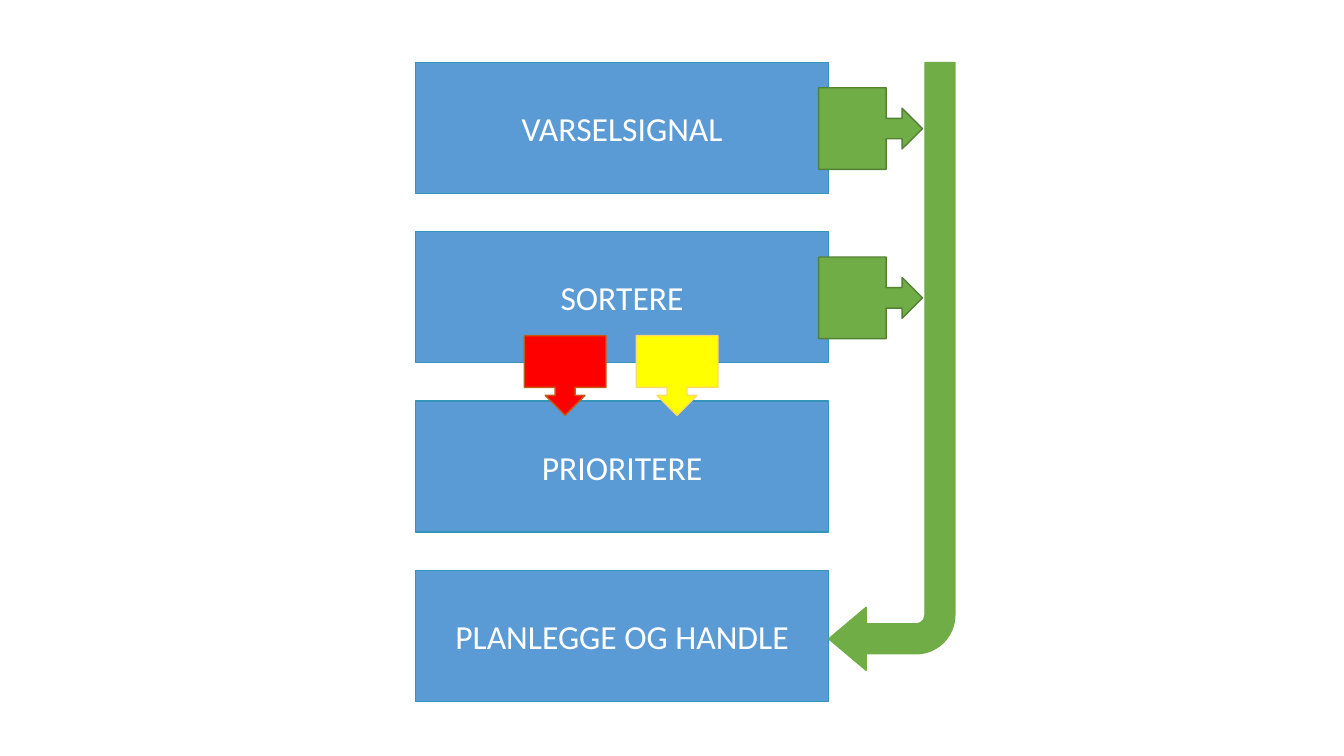
from dataclasses import dataclass

from pptx import Presentation
from pptx.dml.color import RGBColor
from pptx.enum.shapes import MSO_SHAPE
from pptx.enum.text import MSO_ANCHOR, PP_ALIGN
from pptx.util import Inches, Pt

RECTANGLE = MSO_SHAPE.RECTANGLE
CALLOUT = MSO_SHAPE.DOWN_ARROW_CALLOUT
BENT_ARROW = MSO_SHAPE.BENT_ARROW
MIDDLE = MSO_ANCHOR.MIDDLE
CENTER = PP_ALIGN.CENTER


@dataclass(frozen=True)
class Theme:
    font: str = "Calibri"
    step_size: int = 24
    line_width: int = 1
    text: str = "FFFFFF"
    step: tuple = ("5B9BD5", "3494BA")
    urgent: tuple = ("FF0000", "C55A11")
    waiting: tuple = ("FFFF00", "FFD966")
    direct: tuple = ("70AD47", "548235")
    bypass: tuple = ("70AD47", "70AD47")


THEME = Theme()
STEPS = ["VARSELSIGNAL", "SORTERE", "PRIORITERE", "PLANLEGGE OG HANDLE"]
STEP_HEIGHT = 1.3
STEP_PITCH = 1.68


def add_part(slide, kind, box, colors, rotation=0):
    """Draw a preset shape in a (left, top, width, height) box."""
    shape = slide.shapes.add_shape(kind, *(Inches(length) for length in box))
    fill, line = colors
    shape.shadow.inherit = False
    shape.fill.solid()
    shape.fill.fore_color.rgb = RGBColor.from_string(fill)
    shape.line.color.rgb = RGBColor.from_string(line)
    shape.line.width = Pt(THEME.line_width)
    shape.rotation = rotation
    return shape


def write_text(shape, text, *, size, color, align=CENTER, anchor=MIDDLE):
    frame = shape.text_frame
    frame.word_wrap = True
    frame.vertical_anchor = anchor
    paragraph = frame.paragraphs[0]
    paragraph.alignment = align
    run = paragraph.add_run()
    run.text = text
    run.font.name = THEME.font
    run.font.size = Pt(size)
    run.font.color.rgb = RGBColor.from_string(color)


def add_steps(slide, box):
    """Stack the step boxes at an even pitch."""
    left, top, width, _ = box
    for index, label in enumerate(STEPS):
        step_box = (left, top + index * STEP_PITCH, width, STEP_HEIGHT)
        step = add_part(slide, RECTANGLE, step_box, THEME.step)
        write_text(step, label, size=THEME.step_size, color=THEME.text)


def add_sorting_callouts(slide, box):
    """Lead from sorting down to prioritising."""
    left, top, _, _ = box
    for offset, colors in ((1.08, THEME.urgent), (2.19, THEME.waiting)):
        callout_box = (left + offset, top + 2.71, 0.81, 0.79)
        add_part(slide, CALLOUT, callout_box, colors)


def add_bypass(slide, box):
    """Lead from the first two steps straight to the last one."""
    left, top, width, _ = box
    right = left + width
    for index in (1, 0):
        callout_box = (right + 0.01, top + 0.14 + index * STEP_PITCH, 0.81, 1.03)
        add_part(slide, CALLOUT, callout_box, THEME.direct, rotation=270)

    arrow_box = (right, top, 1.25, 6.03)
    arrow = add_part(slide, BENT_ARROW, arrow_box, THEME.bypass, rotation=180)
    for index, value in enumerate((0.237, 0.25, 0.296, 0.307)):
        arrow.adjustments[index] = value


def main():
    presentation = Presentation()
    presentation.slide_width = Inches(13.33)
    presentation.slide_height = Inches(7.5)
    slide = presentation.slides.add_slide(presentation.slide_layouts[6])

    flow_box = (4.12, 0.62, 4.1, 6.34)
    add_steps(slide, flow_box)
    add_sorting_callouts(slide, flow_box)
    add_bypass(slide, flow_box)

    presentation.save("out.pptx")


if __name__ == "__main__":
    main()
